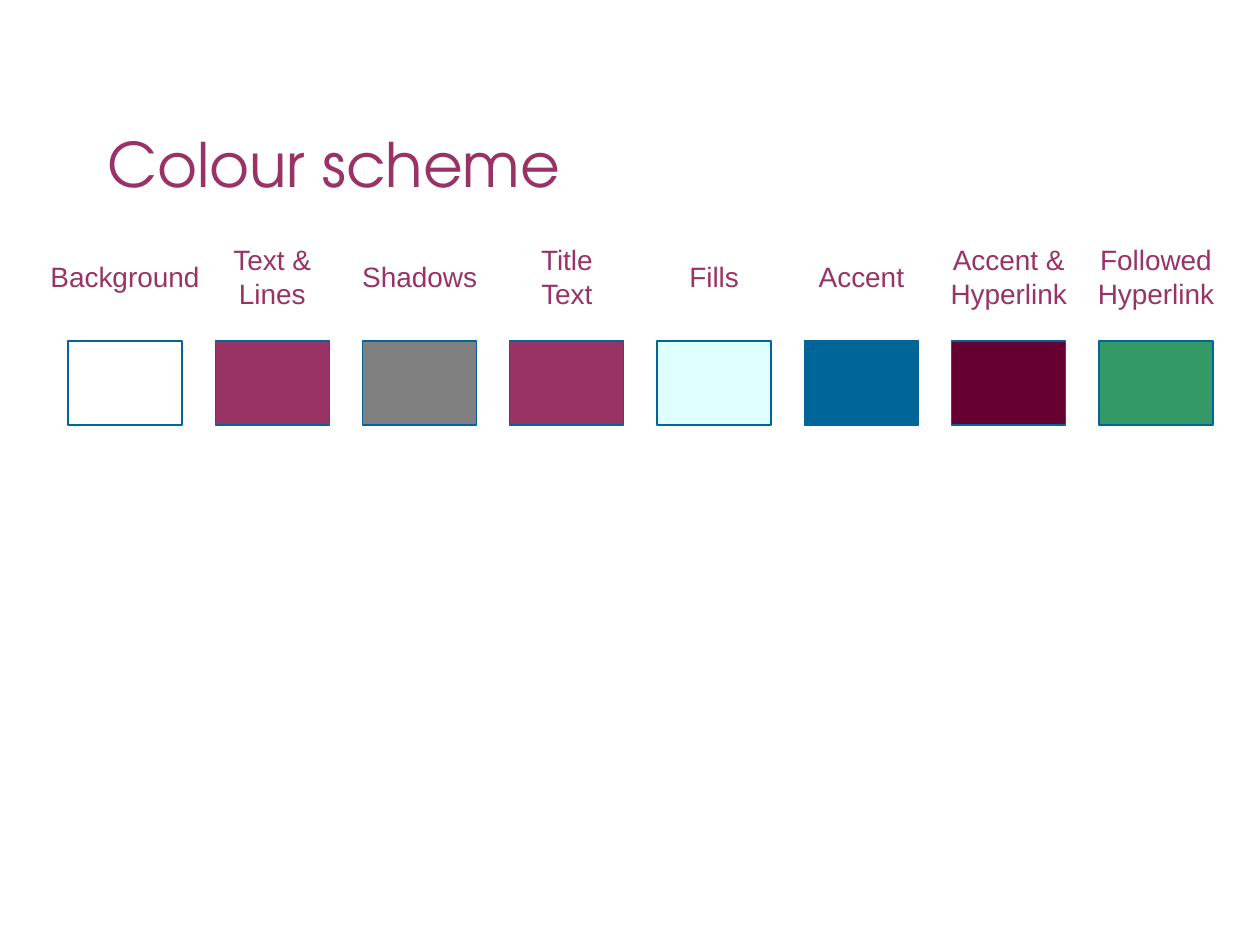
from dataclasses import dataclass

import pptx
import pptx.dml.color
import pptx.enum.shapes
import pptx.enum.text
import pptx.util

SCALE = 914400 / 126  # EMU in one px
PLUM, BLUE = "993366", "006699"
LEFT, RIGHT, TOP = 68, 1099, 341  # first and last swatch, row top
WIDE, HIGH = 114, 84
MIDDLE = 277  # centre line of the labels


@dataclass
class Swatch:
    label: str
    width: int  # of the label
    fill: str


SWATCHES = [
    Swatch("Background", 176, "FFFFFF"),
    Swatch("Text &\nLines", 108, PLUM),
    Swatch("Shadows", 142, "808080"),
    Swatch("Title\vText", 80, PLUM),
    Swatch("Fills", 78, "DFFFFF"),
    Swatch("Accent", 113, BLUE),
    Swatch("Accent &\nHyperlink", 145, "660033"),
    Swatch("Followed\nHyperlink", 145, "339966"),
]


def px(count: float) -> pptx.util.Emu:
    return pptx.util.Emu(round(count * SCALE))


def rgb(code: str) -> pptx.dml.color.RGBColor:
    return pptx.dml.color.RGBColor.from_string(code)


def add_text(slide, text: str, box: tuple, size: int, font: str, align):
    frame = slide.shapes.add_textbox(*map(px, box)).text_frame
    frame.text = text
    for para in frame.paragraphs:
        para.alignment = align
        para.font.size = pptx.util.Pt(size)
        para.font.name = font
        para.font.color.rgb = rgb(PLUM)
    return frame


def add_title(slide, text: str) -> None:
    frame = add_text(slide, text, (95, 84, 1071, 158), 35,
                     "TeX Gyre Adventor", pptx.enum.text.PP_ALIGN.LEFT)
    frame.word_wrap = True
    frame.vertical_anchor = pptx.enum.text.MSO_ANCHOR.MIDDLE


def add_swatch(slide, swatch: Swatch, left: float) -> None:
    rect = slide.shapes.add_shape(
        pptx.enum.shapes.MSO_SHAPE.RECTANGLE,
        px(left), px(TOP), px(WIDE), px(HIGH))
    rect.shadow.inherit = False
    rect.fill.solid()
    rect.fill.fore_color.rgb = rgb(swatch.fill)
    rect.line.color.rgb = rgb(BLUE)
    rect.line.width = pptx.util.Pt(0.75)


def add_label(slide, swatch: Swatch, left: float) -> None:
    """Centre the label over the swatch that starts at left."""
    height = 47 if len(swatch.label.split()) == 1 else 81
    box = (left + (WIDE - swatch.width) / 2, MIDDLE - height / 2,
           swatch.width, height)
    frame = add_text(slide, swatch.label, box, 16, "Arial",
                     pptx.enum.text.PP_ALIGN.CENTER)
    frame.word_wrap = False
    frame.auto_size = pptx.enum.text.MSO_AUTO_SIZE.SHAPE_TO_FIT_TEXT


def main() -> None:
    deck = pptx.Presentation()
    deck.slide_width, deck.slide_height = px(1260), px(945)
    slide = deck.slides.add_slide(deck.slide_layouts[6])
    add_title(slide, "Colour scheme")
    pitch = (RIGHT - LEFT) / (len(SWATCHES) - 1)
    for index, swatch in enumerate(SWATCHES):
        left = LEFT + index * pitch
        add_swatch(slide, swatch, left)
        add_label(slide, swatch, left)
    deck.save("out.pptx")


if __name__ == "__main__":
    main()
